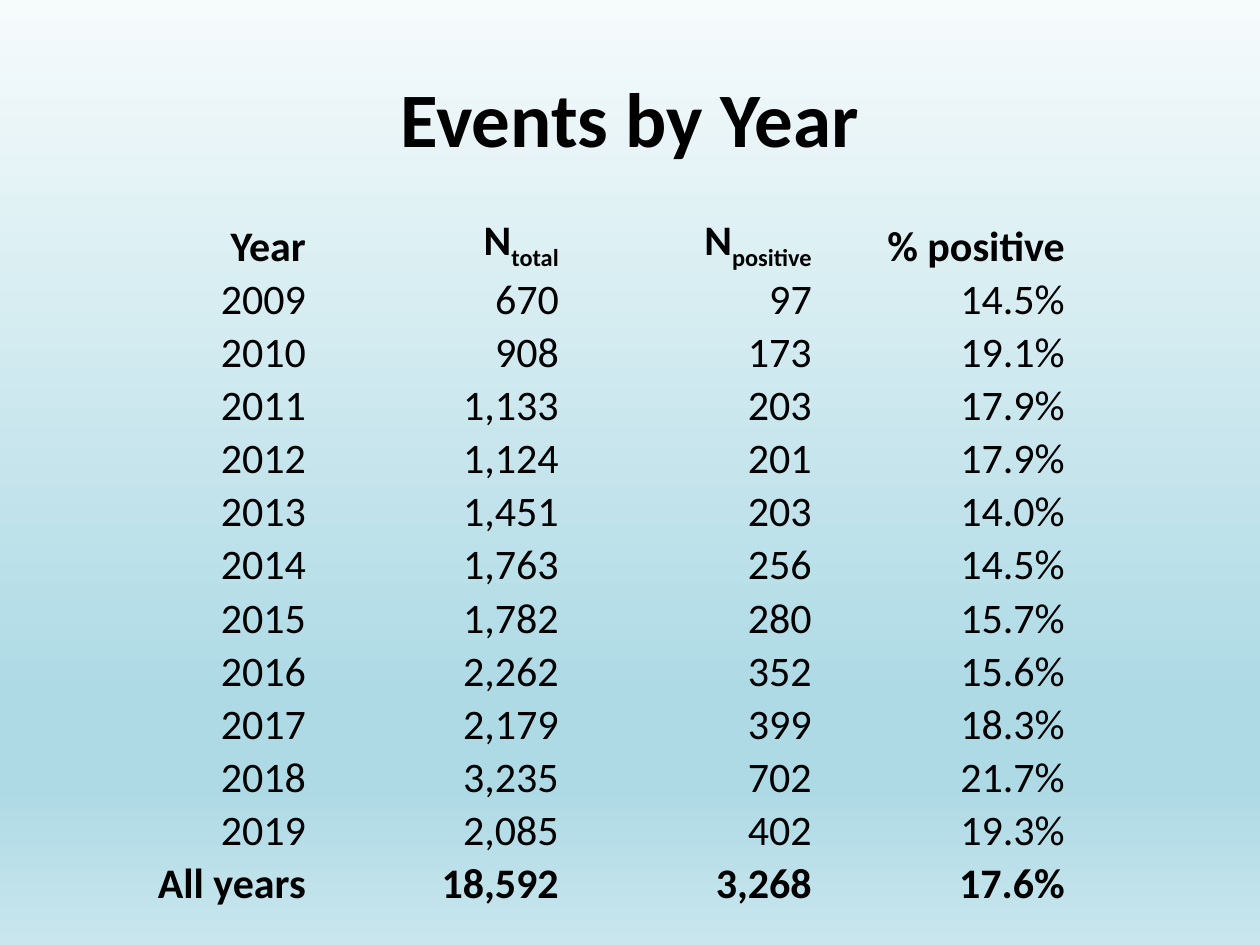
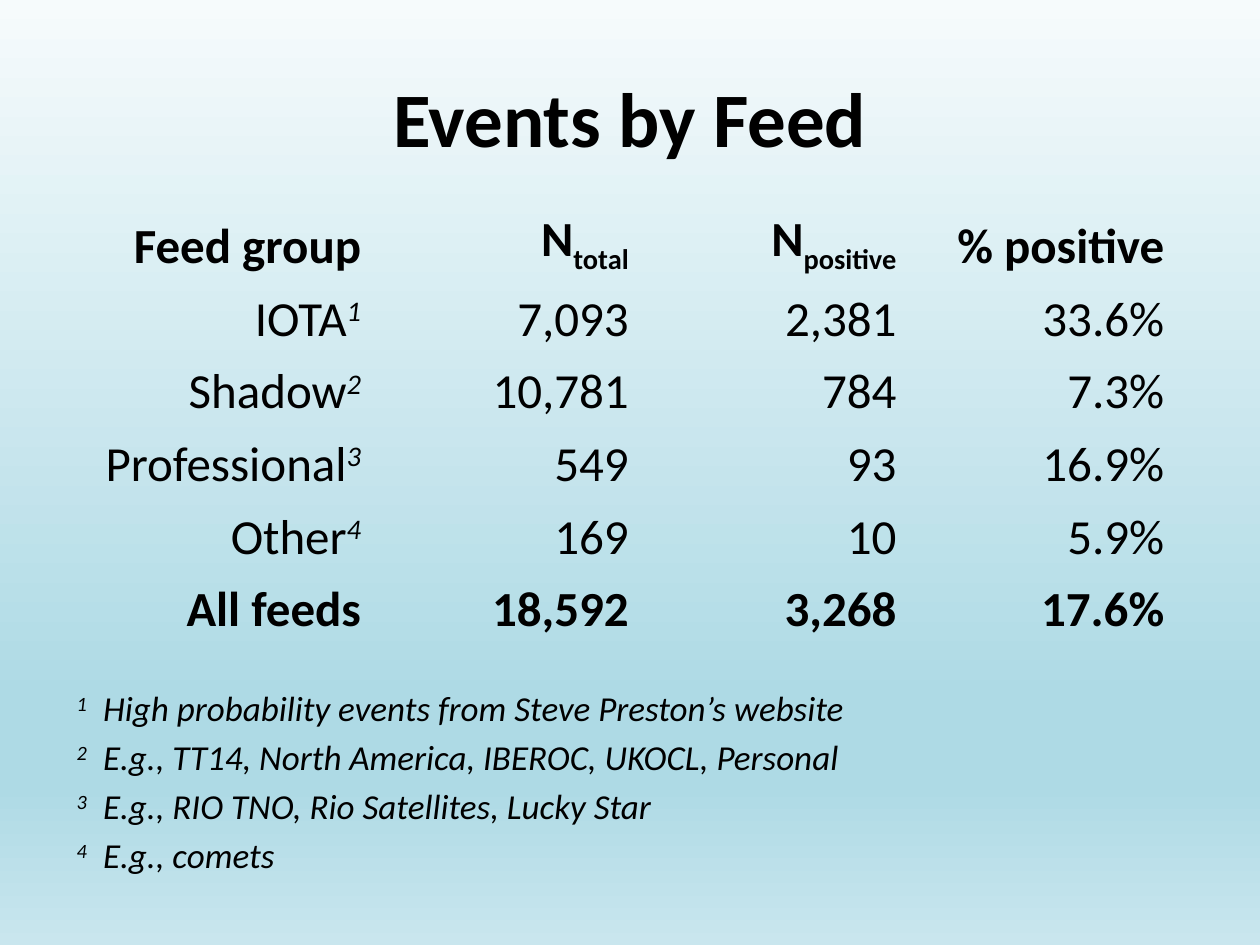
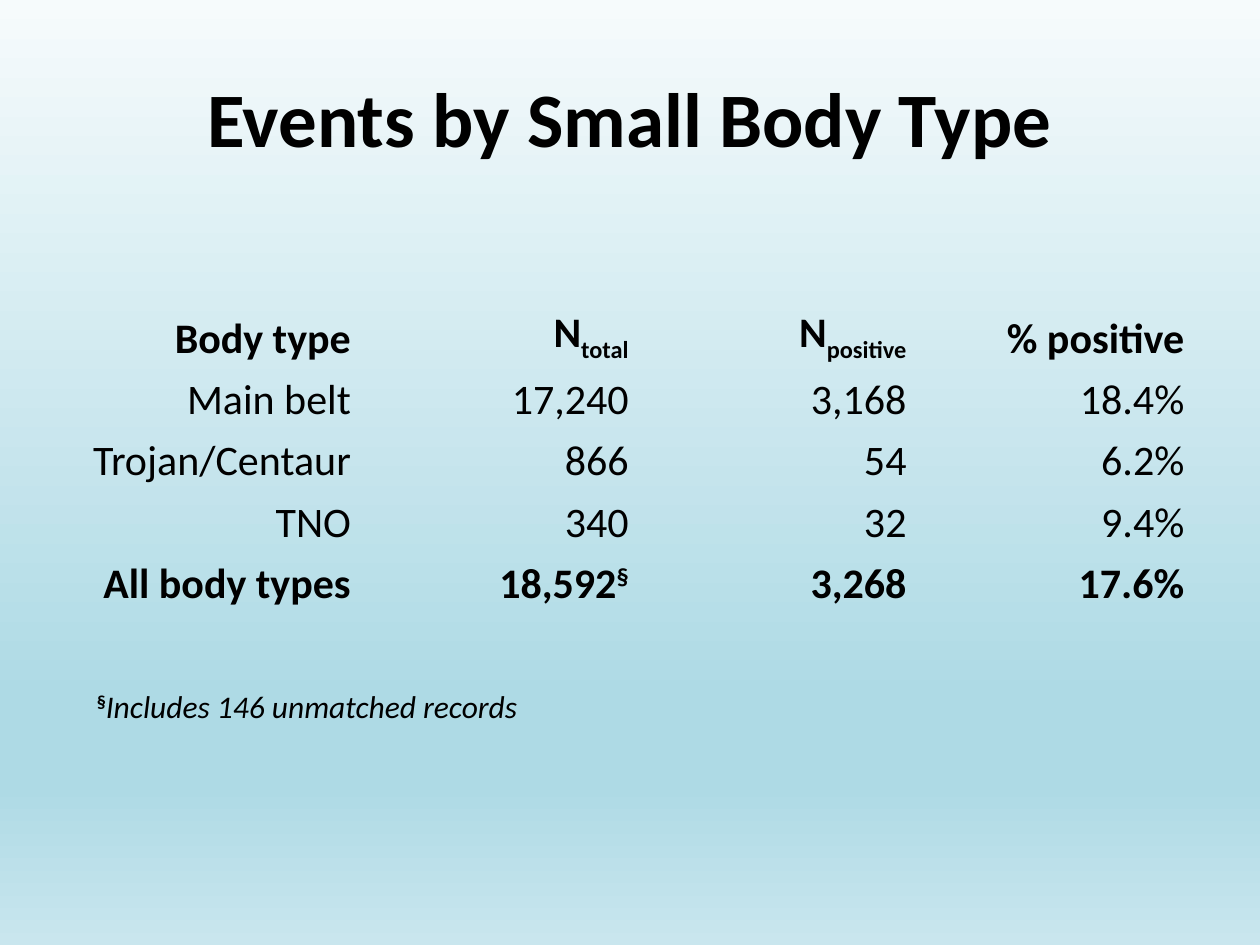
from copy import deepcopy
from typing import NamedTuple

from pptx import Presentation
from pptx.dml.color import RGBColor
from pptx.enum.text import MSO_ANCHOR, PP_ALIGN
from pptx.oxml.ns import qn
from pptx.util import Inches, Pt

BLACK = RGBColor(0x00, 0x00, 0x00)
ICE = RGBColor(0xF6, 0xFB, 0xFC)
SKY = RGBColor(0xAE, 0xDA, 0xE5)
MIST = RGBColor(0xC9, 0xE6, 0xEE)
BACKGROUND_STOPS = ((0, ICE), (0.74, SKY), (0.83, SKY), (1, MIST))

FONT = "Calibri"
NO_STYLE_NO_GRID = "{2D5ABB26-0587-4C30-8999-92F81FD0307C}"
SUPERSCRIPT, SUBSCRIPT = 30, -25
CENTER, LEFT, RIGHT = PP_ALIGN.CENTER, PP_ALIGN.LEFT, PP_ALIGN.RIGHT
TOP, MIDDLE, BOTTOM = MSO_ANCHOR.TOP, MSO_ANCHOR.MIDDLE, MSO_ANCHOR.BOTTOM


class Span(NamedTuple):
    text: str
    baseline: int = 0
    bold: bool | None = None
    italic: bool | None = None


class Box(NamedTuple):
    left: float
    top: float
    width: float
    height: float

    def lengths(self) -> list[int]:
        return [Inches(side) for side in self]


Content = str | tuple[Span, ...]


class Notes(NamedTuple):
    box: Box
    size: int
    lines: list[tuple[Span, ...]]
    hanging: float = 0
    space_before: float = 0


class EventSlide(NamedTuple):
    title: str
    box: Box
    size: int
    group: str
    rows: list[tuple[Content, ...]]
    notes: Notes | None = None


TITLE_BOX = Box(0.5, 0.3, 9, 1.25)
COUNT_HEADERS = (
    (Span("N"), Span("total", SUBSCRIPT)),
    (Span("N"), Span("positive", SUBSCRIPT)),
    "% positive",
)


def feed(name: str, mark: str) -> tuple[Span, ...]:
    return Span(name), Span(mark, SUPERSCRIPT, italic=True)


def footnote(mark: str, text: str) -> tuple[Span, ...]:
    return Span(mark, SUPERSCRIPT, italic=True), Span("\t" + text, italic=True)


EVENT_SLIDES = [
    EventSlide(
        "Events by Year", Box(0.43, 1.7, 8.03, 5.48), 24, "Year",
        [
            ("2009", "670", "97", "14.5%"),
            ("2010", "908", "173", "19.1%"),
            ("2011", "1,133", "203", "17.9%"),
            ("2012", "1,124", "201", "17.9%"),
            ("2013", "1,451", "203", "14.0%"),
            ("2014", "1,763", "256", "14.5%"),
            ("2015", "1,782", "280", "15.7%"),
            ("2016", "2,262", "352", "15.6%"),
            ("2017", "2,179", "399", "18.3%"),
            ("2018", "3,235", "702", "21.7%"),
            ("2019", "2,085", "402", "19.3%"),
            ("All years", "18,592", "3,268", "17.6%"),
        ],
    ),
    EventSlide(
        "Events by Feed", Box(0.75, 1.62, 8.5, 3.46), 28, "Feed group",
        [
            (feed("IOTA", "1"), "7,093", "2,381", "33.6%"),
            (feed("Shadow", "2"), "10,781", "784", "7.3%"),
            (feed("Professional", "3"), "549", "93", "16.9%"),
            (feed("Other", "4"), "169", "10", "5.9%"),
            ("All feeds", "18,592", "3,268", "17.6%"),
        ],
        Notes(
            Box(0.51, 5.4, 9, 1.8), 20,
            [
                footnote("1", "High probability events from Steve Preston’s website"),
                footnote("2", "E.g., TT14, North America, IBEROC, UKOCL, Personal"),
                footnote("3", "E.g., RIO TNO, Rio Satellites, Lucky Star"),
                footnote("4", "E.g., comets"),
            ],
            hanging=0.21, space_before=4,
        ),
    ),
    EventSlide(
        "Events by Small Body Type", Box(0.59, 2.41, 8.82, 2.43), 24, "Body type",
        [
            ("Main belt", "17,240", "3,168", "18.4%"),
            ("Trojan/Centaur", "866", "54", "6.2%"),
            ("TNO", "340", "32", "9.4%"),
            ("All body types", (Span("18,592"), Span("§", SUPERSCRIPT)), "3,268", "17.6%"),
        ],
        Notes(
            Box(0.67, 5.4, 4.17, 0.4), 18,
            [(Span("§", SUPERSCRIPT, bold=True),
              Span("Includes 146 unmatched records", italic=True))],
        ),
    ),
]


def set_attributes(target, values: dict) -> None:
    for name, value in values.items():
        setattr(target, name, value)


def write(paragraph, content: Content, size: int, bold: bool, align) -> None:
    """Fill a paragraph with spans; a span's own bold setting wins."""
    paragraph.alignment = align
    spans = (Span(content),) if isinstance(content, str) else content
    for span in spans:
        run = paragraph.add_run()
        run.text = span.text
        set_attributes(run.font, {
            "name": FONT,
            "size": Pt(size),
            "bold": bold if span.bold is None else span.bold,
            "italic": bool(span.italic),
        })
        run.font.color.rgb = BLACK
        if span.baseline:
            run.font._element.set("baseline", str(span.baseline * 1000))


def paint_background(master) -> None:
    """Give all slides the vertical gradient through their master."""
    fill = master.background.fill
    fill.gradient()
    fill.gradient_angle = 270
    stop_list = next(master._element.iter(qn("a:gsLst")))
    while len(stop_list) < len(BACKGROUND_STOPS):
        stop_list.append(deepcopy(stop_list[0]))
    for stop, (position, color) in zip(fill.gradient_stops, BACKGROUND_STOPS):
        stop.position = position
        stop.color.rgb = color


def add_text_frame(slide, box: Box, anchor):
    frame = slide.shapes.add_textbox(*box.lengths()).text_frame
    set_attributes(frame, {"word_wrap": True, "vertical_anchor": anchor})
    return frame


def add_title(slide, title: str) -> None:
    frame = add_text_frame(slide, TITLE_BOX, MIDDLE)
    write(frame.paragraphs[0], title, 44, True, CENTER)


def add_event_table(slide, event: EventSlide) -> None:
    rows = [(event.group, *COUNT_HEADERS), *event.rows]
    frame = slide.shapes.add_table(len(rows), len(rows[0]), *event.box.lengths())
    table = frame.table
    set_attributes(table, {"first_row": False, "horz_banding": False})
    next(table._tbl.iter(qn("a:tableStyleId"))).text = NO_STYLE_NO_GRID
    for row_index, row in enumerate(rows):
        bold = row_index in (0, len(rows) - 1)
        for column_index, content in enumerate(row):
            cell = table.cell(row_index, column_index)
            cell.fill.background()
            set_attributes(cell, {
                "margin_left": Inches(0.01),
                "margin_right": Inches(0.01),
                "margin_top": Inches(0.01),
                "margin_bottom": 0,
                "vertical_anchor": BOTTOM,
            })
            write(cell.text_frame.paragraphs[0], content, event.size, bold, RIGHT)


def add_notes(slide, notes: Notes) -> None:
    frame = add_text_frame(slide, notes.box, TOP)
    for index, line in enumerate(notes.lines):
        paragraph = frame.add_paragraph() if index else frame.paragraphs[0]
        paragraph.space_before = Pt(notes.space_before)
        write(paragraph, line, notes.size, False, LEFT)
        if notes.hanging:
            properties = paragraph._p.get_or_add_pPr()
            properties.set("marL", str(Inches(notes.hanging)))
            properties.set("indent", str(-Inches(notes.hanging)))


def main() -> None:
    presentation = Presentation()
    presentation.slide_width = Inches(10)
    presentation.slide_height = Inches(7.5)
    paint_background(presentation.slide_master)
    blank = presentation.slide_layouts[6]
    for event in EVENT_SLIDES:
        slide = presentation.slides.add_slide(blank)
        add_title(slide, event.title)
        add_event_table(slide, event)
        if event.notes:
            add_notes(slide, event.notes)
    presentation.save("out.pptx")


if __name__ == "__main__":
    main()
